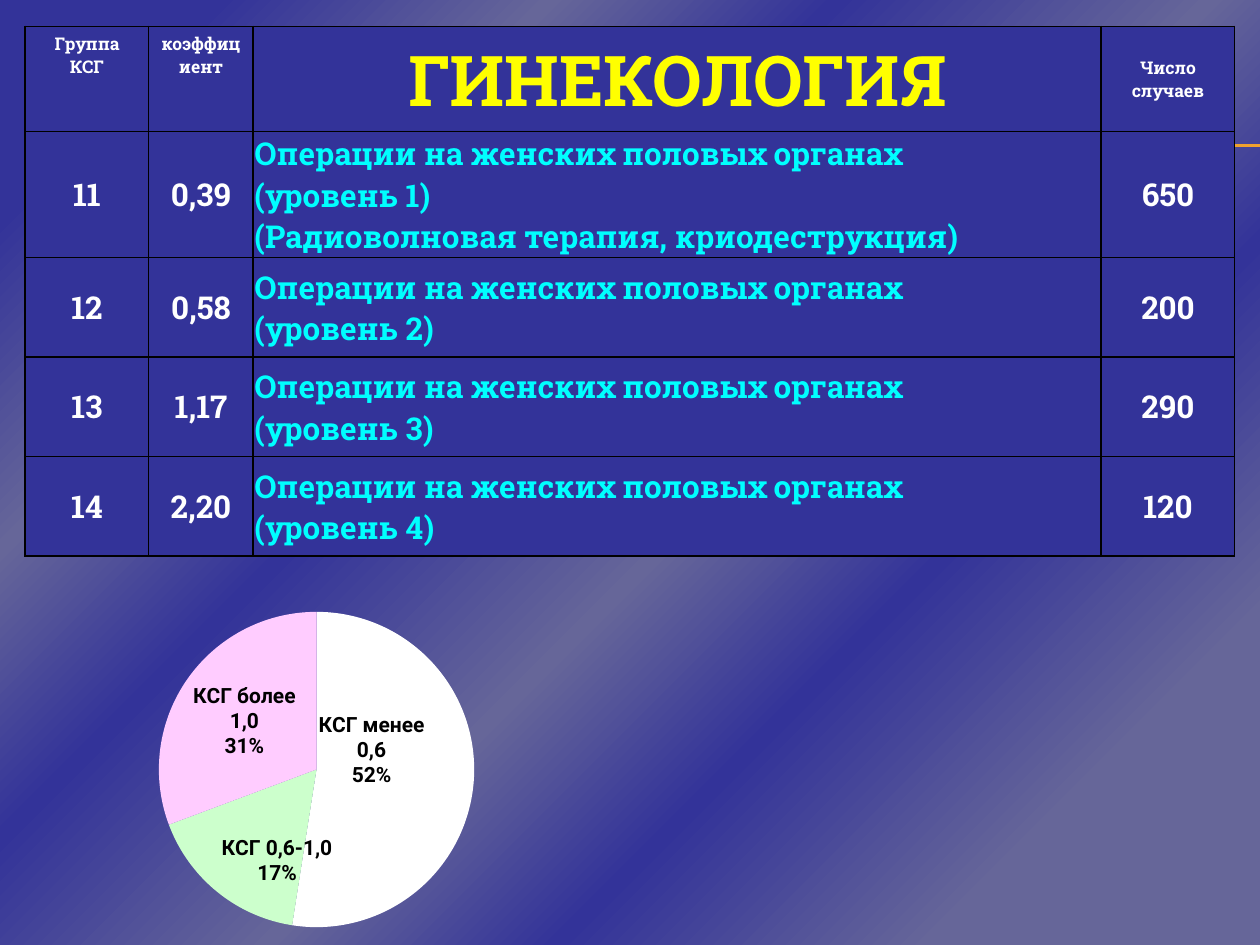
from copy import deepcopy

from lxml import etree
from pptx import Presentation
from pptx.chart.data import CategoryChartData
from pptx.dml.color import RGBColor
from pptx.enum.chart import XL_CHART_TYPE as CT, XL_LABEL_POSITION as LP
from pptx.enum.shapes import MSO_CONNECTOR as MC
from pptx.enum.text import MSO_ANCHOR as MA, PP_ALIGN as PA
from pptx.oxml import parse_xml
from pptx.oxml.ns import nsdecls, qn
from pptx.util import Inches, Pt

COLORS = {
    "navy": "333399", "slate": "666699", "rule": "F0A22E", "border": "000000",
    "white": "FFFFFF", "yellow": "FFFF00", "cyan": "00FFFF",
    "green": "CCFFCC", "pink": "FFCCFF", "black": "000000",
}
COLS = [0.98, 0.83, 6.73, 1.06]
ROWS = [0.83, 1.0, 0.79, 0.79, 0.79]
OPERATIONS = "Операции на женских половых органах"
GROUPS = [
    ("11", "0,39", ["(уровень 1)", "(Радиоволновая терапия, криодеструкция)"], "650"),
    ("12", "0,58", ["(уровень 2)"], "200"),
    ("13", "1,17", ["(уровень 3)"], "290"),
    ("14", "2,20", ["(уровень 4)"], "120"),
]
SHARES = [("КСГ менее 0,6", 53, "white"), ("КСГ 0,6-1,0", 17, "green"),
          ("КСГ более 1,0", 31, "pink")]


def rgb(name):
    return RGBColor.from_string(COLORS[name])


def set_font(font, color, **values):
    for key, value in values.items():
        setattr(font, key, value)
    font.color.rgb = rgb(color)


def set_background(s):
    stops = zip([10, 25, 38, 55, 68, 85], ["navy", "slate"] * 3)
    gs = "".join(f'<a:gs pos="{pos * 1000}"><a:srgbClr val="{COLORS[name]}"/></a:gs>'
                 for pos, name in stops)
    s.background.fill.solid()
    solid = s.background._cSld.bg.bgPr.find(qn("a:solidFill"))
    solid.getparent().replace(solid, parse_xml(
        f'<a:gradFill {nsdecls("a")} rotWithShape="1"><a:gsLst>{gs}</a:gsLst>'
        '<a:lin ang="2700000" scaled="1"/></a:gradFill>'))


def add_rules(s, left, right, tops):
    for top in tops:
        line = s.shapes.add_connector(MC.STRAIGHT, Inches(left), Inches(top),
                                      Inches(right), Inches(top))
        line.line.color.rgb = rgb("rule")
        line.line.width = Pt(0.75)
        etree.SubElement(line._element.spPr, qn("a:effectLst"))


def fill_cell(cell, lines, size=18, color="white", align=PA.CENTER, anchor=MA.MIDDLE):
    cell.fill.solid()
    cell.fill.fore_color.rgb = rgb("navy")
    cell.vertical_anchor = anchor
    tf = cell.text_frame
    for i, text in enumerate(lines):
        p = tf.paragraphs[0] if i == 0 else tf.add_paragraph()
        p.alignment = align
        r = p.add_run()
        r.text = text
        set_font(r.font, color, size=Pt(size), bold=True, name="Roboto Slab")
    # Borders come before the fill
    for i, side in enumerate(("lnL", "lnR", "lnT", "lnB")):
        cell._tc.get_or_add_tcPr().insert(i, parse_xml(
            f'<a:{side} {nsdecls("a")} w="12700"><a:solidFill>'
            f'<a:srgbClr val="{COLORS["border"]}"/></a:solidFill></a:{side}>'))


def add_groups_table(s, left, top):
    table = s.shapes.add_table(len(ROWS), len(COLS), Inches(left), Inches(top),
                               Inches(sum(COLS)), Inches(sum(ROWS))).table
    table.first_row = table.horz_banding = False
    for col, width in zip(table.columns, COLS):
        col.width = Inches(width)
    for row, height in zip(table.rows, ROWS):
        row.height = Inches(height)

    # Header row
    fill_cell(table.cell(0, 0), ["Группа КСГ"], 10, anchor=MA.TOP)
    fill_cell(table.cell(0, 1), ["коэффициент"], 10, anchor=MA.TOP)
    fill_cell(table.cell(0, 2), ["ГИНЕКОЛОГИЯ"], 40, "yellow", anchor=MA.TOP)
    fill_cell(table.cell(0, 3), ["Число", "случаев"], 10)

    # One row per group
    for i, (group, factor, levels, cases) in enumerate(GROUPS, 1):
        for j, text in ((0, group), (1, factor), (3, cases)):
            fill_cell(table.cell(i, j), [text])
        cell = table.cell(i, 2)
        fill_cell(cell, [OPERATIONS, *levels], color="cyan", align=PA.LEFT)
        cell.margin_left = cell.margin_right = cell.margin_top = Inches(0.01)
        cell.margin_bottom = 0


def layout_xml(**values):
    items = "".join(f'<c:{key} val="{value}"/>' for key, value in values.items())
    return parse_xml(f'<c:layout {nsdecls("c")}><c:manualLayout>{items}'
                     '</c:manualLayout></c:layout>')


def add_shares_pie(s, left, top, width, height):
    data = CategoryChartData()
    data.categories = [name for name, _, _ in SHARES]
    data.add_series("Series 1", [value for _, value, _ in SHARES])
    chart = s.shapes.add_chart(CT.PIE, Inches(left), Inches(top), Inches(width),
                               Inches(height), data).chart
    chart.has_title = chart.has_legend = False
    set_font(chart.font, "black", size=Pt(18), name="Roboto")
    plot = chart.plots[0]
    plot.vary_by_categories = True
    series = plot.series[0]
    for i, (_, _, color) in enumerate(SHARES):
        fill = series.points[i].format.fill
        fill.solid()
        fill.fore_color.rgb = rgb(color)

    # Inner plot area
    area = chart._chartSpace.chart.plotArea
    for old in area.findall(qn("c:layout")):
        area.remove(old)
    area.insert(0, layout_xml(layoutTarget="inner", xMode="edge", yMode="edge",
                              x=0.07, y=0.18, w=0.84, h=0.81))

    # Category and percentage labels
    labels = series.data_labels
    for key, value in {"show_value": False, "show_category_name": True,
                       "show_percentage": True, "position": LP.INSIDE_END}.items():
        setattr(labels, key, value)
    set_font(labels.font, "black", size=Pt(12), bold=True, name="Roboto")
    dLbls = labels._element
    separator = parse_xml(f'<c:separator {nsdecls("c")}>\n</c:separator>')
    dLbls.find(qn("c:showBubbleSize")).addnext(separator)

    # The largest slice has its label nearer the centre
    dLbl = etree.Element(qn("c:dLbl"))
    etree.SubElement(dLbl, qn("c:idx")).set("val", "0")
    dLbl.append(layout_xml(x=-0.07, y=-0.08))
    for child in dLbls:
        if child.tag not in (qn("c:showLeaderLines"), qn("c:leaderLines")):
            dLbl.append(deepcopy(child))
    dLbls.insert(0, dLbl)


def main():
    prs = Presentation()
    prs.slide_width, prs.slide_height = Inches(10), Inches(7.5)
    s = prs.slides.add_slide(prs.slide_layouts[6])
    set_background(s)
    add_rules(s, 0.56, 10, [1.15, 1.16])
    add_groups_table(s, 0.2, 0.21)
    add_shares_pie(s, 0.2, 4.3, 4.72, 3.09)
    prs.save("out.pptx")


if __name__ == "__main__":
    main()
